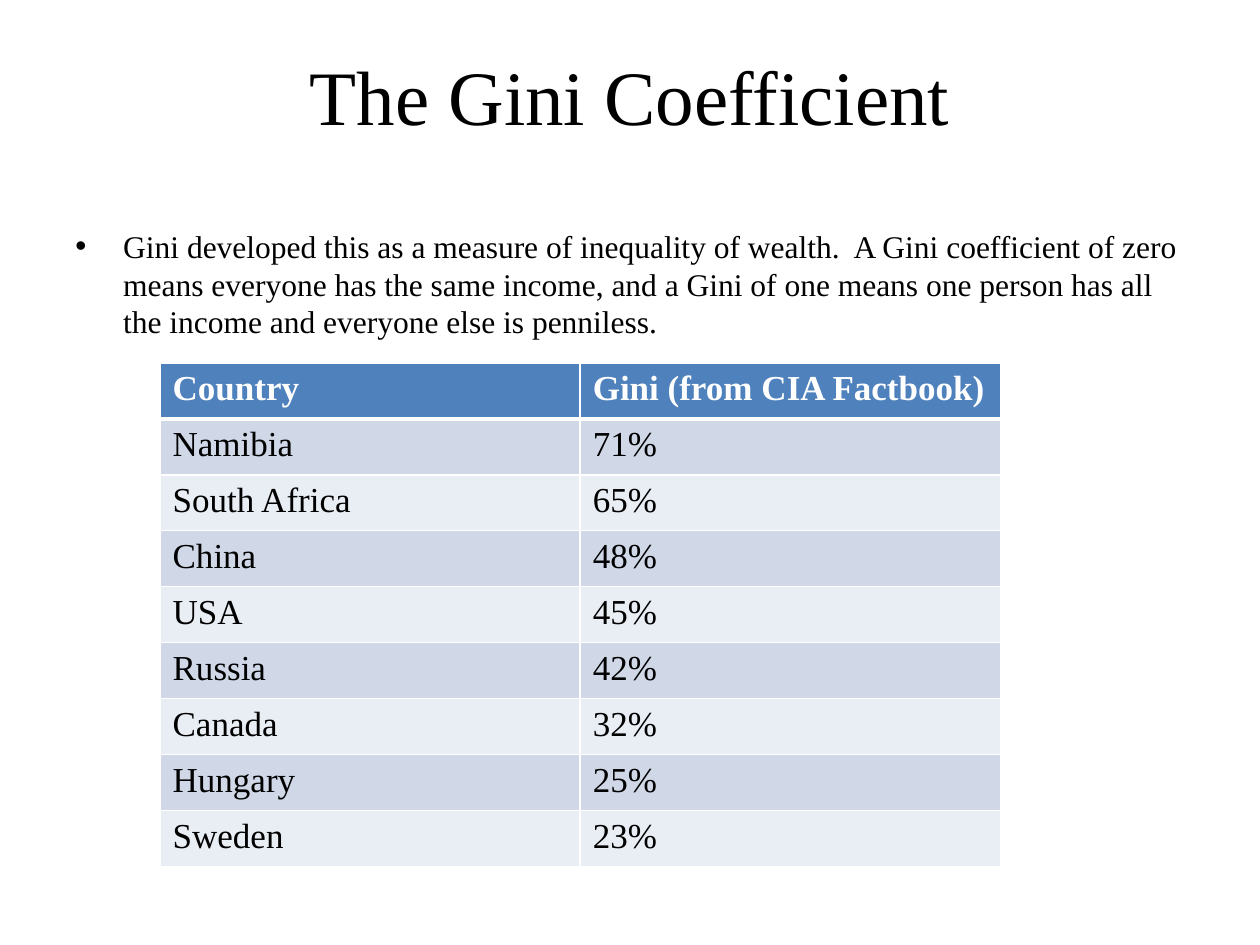
import pptx
import pptx.dml.color
import pptx.enum.text
import pptx.oxml
import pptx.oxml.ns
import pptx.util
from pptx.util import Inches

BLACK = pptx.dml.color.RGBColor(0x00, 0x00, 0x00)
WHITE = pptx.dml.color.RGBColor(0xFF, 0xFF, 0xFF)
HEADER_BLUE = pptx.dml.color.RGBColor(0x4F, 0x81, 0xBD)
BAND_DARK = pptx.dml.color.RGBColor(0xD0, 0xD8, 0xE8)
BAND_LIGHT = pptx.dml.color.RGBColor(0xE9, 0xED, 0xF4)
FONT = "Times New Roman"
LEFT = pptx.enum.text.PP_ALIGN.LEFT
CENTER = pptx.enum.text.PP_ALIGN.CENTER
TOP = pptx.enum.text.MSO_ANCHOR.TOP
MIDDLE = pptx.enum.text.MSO_ANCHOR.MIDDLE


def write_text(frame, text, size, color=BLACK, bold=False, align=LEFT, anchor=TOP):
    frame.word_wrap = True
    frame.vertical_anchor = anchor
    paragraph = frame.paragraphs[0]
    paragraph.alignment = align
    run = paragraph.add_run()
    run.text = text
    run.font.name = FONT
    run.font.size = pptx.util.Pt(size)
    run.font.bold = bold
    run.font.color.rgb = color
    return paragraph


def set_border(cell, side, points):
    line = pptx.oxml.parse_xml(
        f'<a:{side} {pptx.oxml.ns.nsdecls("a")} w="{pptx.util.Pt(points)}">'
        f'<a:solidFill><a:srgbClr val="{WHITE}"/></a:solidFill></a:{side}>'
    )
    cell._tc.get_or_add_tcPr().append(line)


presentation = pptx.Presentation()
presentation.slide_width = Inches(10)
presentation.slide_height = Inches(7.5)
slide = presentation.slides.add_slide(presentation.slide_layouts[6])

title = slide.shapes.add_textbox(Inches(0.5), Inches(0.3), Inches(9), Inches(0.91))
write_text(title.text_frame, "The Gini Coefficient", 44, align=CENTER, anchor=MIDDLE)

body = slide.shapes.add_textbox(Inches(0.5), Inches(1.75), Inches(9), Inches(4.95))
paragraph = write_text(
    body.text_frame,
    "Gini developed this as a measure of inequality of wealth.  A Gini coefficient of zero "
    "means everyone has the same income, and a Gini of one means one person has all "
    "the income and everyone else is penniless.",
    18,
)
paragraph.space_before = pptx.util.Pt(3.6)
properties = paragraph._p.get_or_add_pPr()
properties.set("marL", str(Inches(0.38)))
properties.set("indent", str(Inches(-0.38)))
for bullet in ('<a:buFont {} typeface="Arial"/>', '<a:buChar {} char="•"/>'):
    properties.append(pptx.oxml.parse_xml(bullet.format(pptx.oxml.ns.nsdecls("a"))))

rows = [
    ("Country", "Gini (from CIA Factbook)"),
    ("Namibia", "71%"),
    ("South Africa", "65%"),
    ("China", "48%"),
    ("USA", "45%"),
    ("Russia", "42%"),
    ("Canada", "32%"),
    ("Hungary", "25%"),
    ("Sweden", "23%"),
]
table = slide.shapes.add_table(
    len(rows), 2, Inches(1.27), Inches(2.88), Inches(6.67), Inches(4)
).table
for row_index, values in enumerate(rows):
    header = row_index == 0
    band = BAND_DARK if row_index % 2 else BAND_LIGHT
    for column_index, value in enumerate(values):
        cell = table.cell(row_index, column_index)
        write_text(cell.text_frame, value, 20, color=WHITE if header else BLACK, bold=header)
        for side in ("lnL", "lnR", "lnT", "lnB"):
            thick = (row_index, side) in ((0, "lnB"), (1, "lnT"))
            set_border(cell, side, 3 if thick else 1)
        cell.fill.solid()
        cell.fill.fore_color.rgb = HEADER_BLUE if header else band

presentation.save("out.pptx")
